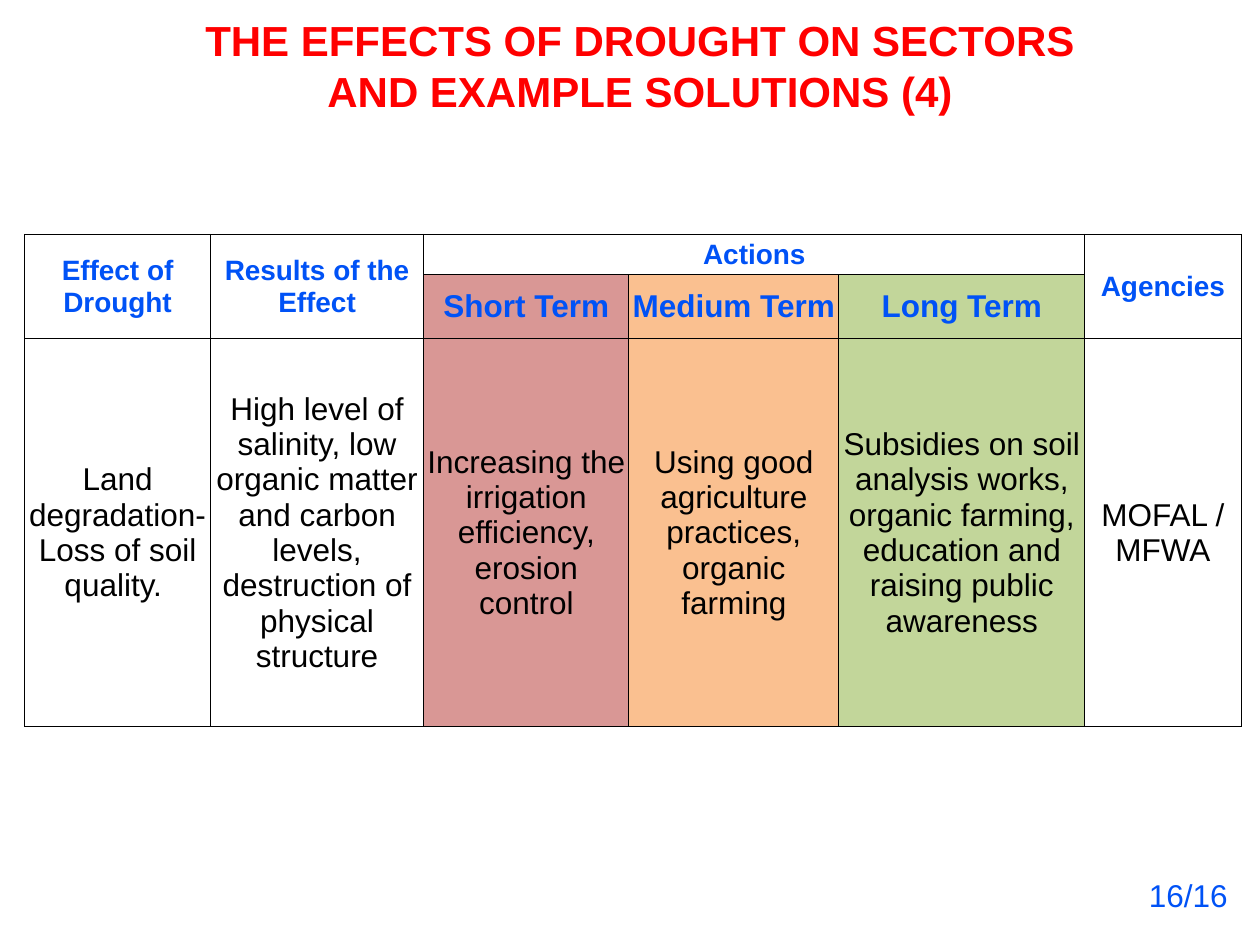
from dataclasses import dataclass
from lxml.etree import SubElement
from pptx import Presentation
from pptx.dml.color import RGBColor as Color
from pptx.enum.text import MSO_ANCHOR as Anchor, MSO_AUTO_SIZE as AutoSize, PP_ALIGN as Align
from pptx.oxml.ns import qn
from pptx.util import Pt


@dataclass(frozen=True)
class Theme:
    font: str = "Arial"
    title: str = "FF0000"
    accent: str = "0052F6"
    body: str = "000000"
    border: str = "000000"
    short_term: str = "D99795"
    medium_term: str = "FAC090"
    long_term: str = "C2D69A"
    title_size: int = 24
    text_size: int = 18
    header_size: int = 16
    border_width: float = 0.5
    cell_inset: float = 0.72


class SlideBuilder:
    def __init__(self, slide, theme):
        self.slide = slide
        self.theme = theme

    def set_text(self, frame, text, size, color, bold=False, align=Align.CENTER):
        frame.text = text
        for paragraph in frame.paragraphs:
            paragraph.alignment = align
            for run in paragraph.runs:
                run.font.name = self.theme.font
                run.font.size = Pt(size)
                run.font.bold = bold
                run.font.color.rgb = Color.from_string(color)

    def text(self, box, text, size, color, bold=False, align=Align.CENTER, grow=False):
        frame = self.slide.shapes.add_textbox(*map(Pt, box)).text_frame
        frame.word_wrap = True
        frame.auto_size = AutoSize.SHAPE_TO_FIT_TEXT if grow else AutoSize.NONE
        self.set_text(frame, text, size, color, bold, align)

    def border(self, cell):
        properties = cell._tc.get_or_add_tcPr()
        for side in ("lnL", "lnR", "lnT", "lnB"):
            line = SubElement(properties, qn(f"a:{side}"), w=str(Pt(self.theme.border_width)))
            fill = SubElement(line, qn("a:solidFill"))
            SubElement(fill, qn("a:srgbClr"), val=self.theme.border)

    def cell(self, cell, fill):
        inset = Pt(self.theme.cell_inset)
        cell.margin_left = cell.margin_right = cell.margin_top = inset
        cell.margin_bottom = 0
        cell.vertical_anchor = Anchor.MIDDLE
        self.border(cell)
        if fill:
            cell.fill.solid()
            cell.fill.fore_color.rgb = Color.from_string(fill)
        else:
            cell.fill.background()

    def table(self, left, top, widths, heights, fills, merges):
        frame = self.slide.shapes.add_table(
            len(heights), len(widths), Pt(left), Pt(top), Pt(sum(widths)), Pt(sum(heights)))
        table = frame.table
        table.first_row = table.horz_banding = False
        for column, width in zip(table.columns, widths):
            column.width = Pt(width)
        for row, height in zip(table.rows, heights):
            row.height = Pt(height)
        for r in range(len(heights)):
            for c in range(len(widths)):
                self.cell(table.cell(r, c), fills.get(c) if r else None)
        for first, last in merges:
            table.cell(*first).merge(table.cell(*last))
        return table


def main():
    deck = Presentation()
    deck.slide_width, deck.slide_height = Pt(720), Pt(540)
    theme = Theme()
    builder = SlideBuilder(deck.slides.add_slide(deck.slide_layouts[6]), theme)

    actions = builder.table(
        14.2, 133.9,
        widths=(106, 122, 117.2, 120, 140.6, 89.2),
        heights=(23, 36, 222),
        fills={2: theme.short_term, 3: theme.medium_term, 4: theme.long_term},
        merges=(((0, 0), (1, 0)), ((0, 1), (1, 1)), ((0, 2), (0, 4)), ((0, 5), (1, 5))))

    headings = {0: "Effect of Drought", 1: "Results of the Effect", 2: "Actions", 5: "Agencies"}
    terms = {2: "Short Term", 3: "Medium Term", 4: "Long Term"}
    details = dict(enumerate((
        "Land degradation-Loss of soil quality. ",
        "High level of salinity, low organic matter and carbon levels, "
        "destruction of physical structure",
        "Increasing the irrigation efficiency, erosion control",
        "Using good agriculture practices, organic farming",
        "Subsidies on soil analysis works, organic farming, education and raising public awareness",
        "MOFAL / MFWA")))
    rows = (
        (headings, theme.header_size, theme.accent, True),
        (terms, theme.text_size, theme.accent, True),
        (details, theme.text_size, theme.body, False))
    for r, (texts, size, color, bold) in enumerate(rows):
        for c, text in texts.items():
            builder.set_text(actions.cell(r, c).text_frame, text, size, color, bold)

    builder.text((105, 5, 521.5, 83.5),
                 "THE EFFECTS OF DROUGHT ON SECTORS AND EXAMPLE SOLUTIONS (4)",
                 theme.title_size, theme.title, bold=True)
    builder.text((649.4, 496.8, 70.6, 29), "16/16", theme.text_size, theme.accent,
                 align=Align.LEFT, grow=True)

    deck.save("out.pptx")


if __name__ == "__main__":
    main()
